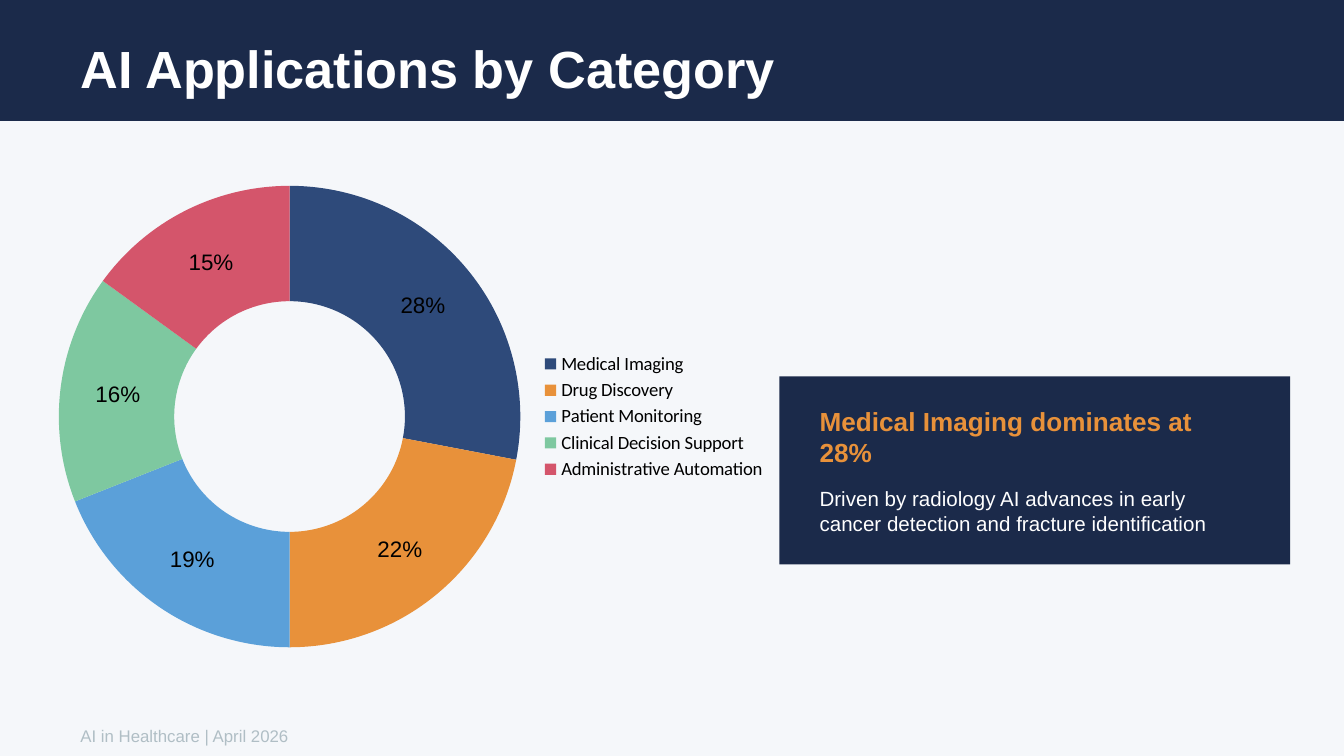
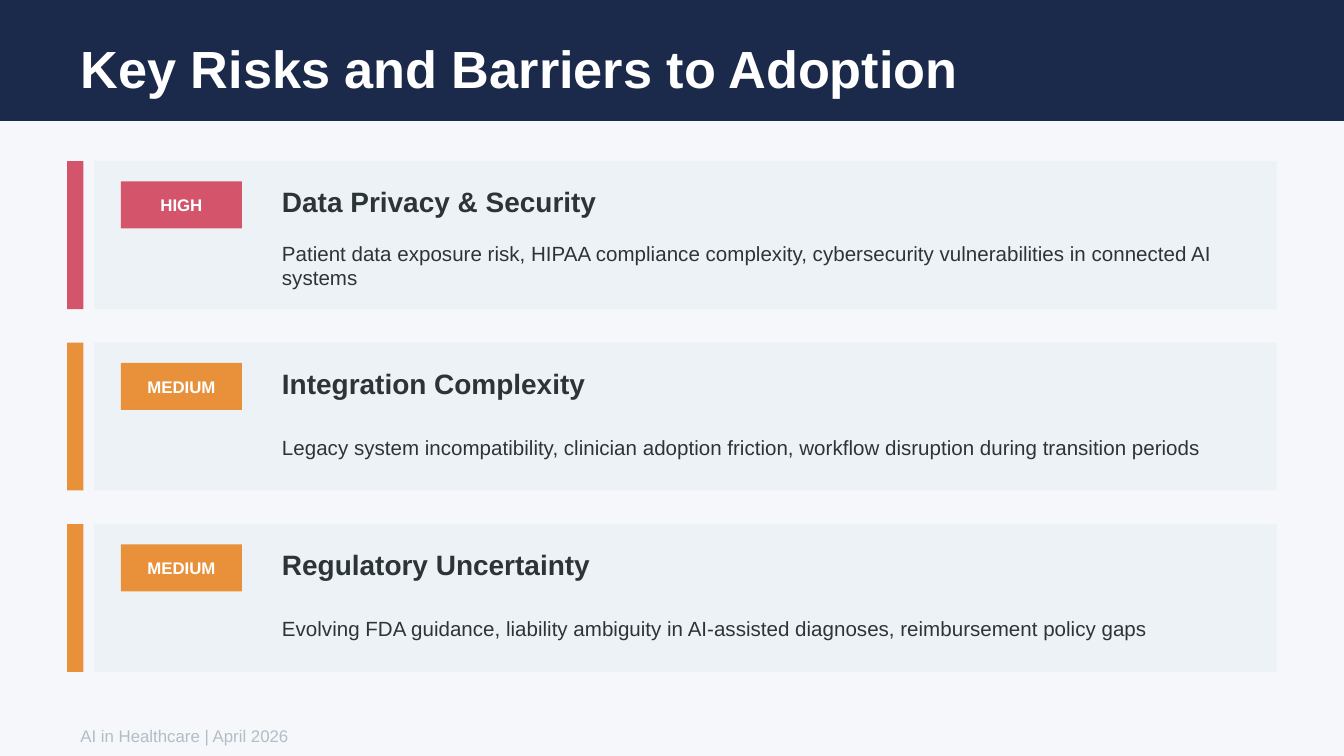
import pptx
import pptx.chart.data
import pptx.dml.color
import pptx.enum.chart
import pptx.enum.shapes
import pptx.enum.text
import pptx.util

PX = 4572  # EMU per px, 200 px to the inch
WIDTH, HEIGHT = 2000, 1125
FONT = "Arial"
NAVY, PAPER, CARD, WHITE = "1B2A4A", "F5F7FA", "EDF2F7", "FFFFFF"
INK, MUTED, BLACK, EDGE = "2D3436", "B0BEC5", "000000", "F9F9F9"
RED, ORANGE = "D4556B", "E8913A"
FOOTER = "AI in Healthcare | April 2026"

# Text styles
TITLE = {"size": 28, "bold": True, "color": WHITE}
CALLOUT_HEAD = {"size": 14, "bold": True, "color": ORANGE}
CALLOUT_BODY = {"size": 11, "bold": False, "color": WHITE}
CARD_HEAD = {"size": 15, "bold": True, "color": INK}
CARD_BODY = {"size": 11, "bold": False, "color": INK}
BADGE = {"size": 9, "bold": True, "color": WHITE}
FOOT = {"size": 9, "bold": False, "color": MUTED}

CATEGORIES = [
    ("Medical Imaging", 28, "2E4A7A"),
    ("Drug Discovery", 22, ORANGE),
    ("Patient Monitoring", 19, "5BA0D9"),
    ("Clinical Decision Support", 16, "7EC8A0"),
    ("Administrative Automation", 15, RED),
]

RISKS = [
    ("HIGH", RED, "Data Privacy & Security",
     "Patient data exposure risk, HIPAA compliance complexity, "
     "cybersecurity vulnerabilities in connected AI systems"),
    ("MEDIUM", ORANGE, "Integration Complexity",
     "Legacy system incompatibility, clinician adoption friction, "
     "workflow disruption during transition periods"),
    ("MEDIUM", ORANGE, "Regulatory Uncertainty",
     "Evolving FDA guidance, liability ambiguity in AI-assisted diagnoses, "
     "reimbursement policy gaps"),
]


def rgb(value):
    return pptx.dml.color.RGBColor.from_string(value)


def emu(*lengths):
    return [length * PX for length in lengths]


def paint(fill, color):
    fill.solid()
    fill.fore_color.rgb = rgb(color)


def set_font(font, size, color, bold=False, name=FONT):
    values = {"name": name, "size": pptx.util.Pt(size), "bold": bold}
    for key, value in values.items():
        setattr(font, key, value)
    font.color.rgb = rgb(color)


def write(sp, text, style, align="LEFT"):
    tf = sp.text_frame
    frame = {
        "word_wrap": True,
        "auto_size": pptx.enum.text.MSO_AUTO_SIZE.NONE,
        "vertical_anchor": pptx.enum.text.MSO_ANCHOR.MIDDLE,
    }
    for key, value in frame.items():
        setattr(tf, key, value)
    p = tf.paragraphs[0]
    p.alignment = getattr(pptx.enum.text.PP_ALIGN, align)
    r = p.add_run()
    r.text = text
    set_font(r.font, **style)


def add_rect(slide, box, color):
    sp = slide.shapes.add_shape(pptx.enum.shapes.MSO_SHAPE.RECTANGLE, *emu(*box))
    sp.shadow.inherit = False
    paint(sp.fill, color)
    sp.line.fill.background()
    return sp


def add_text(slide, box, text, style):
    write(slide.shapes.add_textbox(*emu(*box)), text, style)


def add_slide(prs, title):
    """Start a slide with the title band and footer."""
    slide = prs.slides.add_slide(prs.slide_layouts.get_by_name("Title Only"))
    sp = slide.shapes.title
    sp.left, sp.top, sp.width, sp.height = emu(100, 40, 1800, 120)
    write(sp, title, TITLE)
    band = add_rect(slide, (0, 0, WIDTH, 180), NAVY)
    sp.element.addprevious(band.element)  # band goes behind the title
    add_text(slide, (100, 1070, 1800, 50), FOOTER, FOOT)
    return slide


def add_doughnut(slide, box, rows):
    data = pptx.chart.data.CategoryChartData()
    data.categories = [name for name, _, _ in rows]
    data.add_series("Series 1", [value for _, value, _ in rows])
    chart = slide.shapes.add_chart(
        pptx.enum.chart.XL_CHART_TYPE.DOUGHNUT, *emu(*box), data).chart
    chart.has_title = False
    set_font(chart.font, 10, BLACK, name="Calibri")

    # Legend
    chart.has_legend = True
    chart.legend.position = pptx.enum.chart.XL_LEGEND_POSITION.RIGHT
    chart.legend.include_in_layout = False
    set_font(chart.legend.font, 10, BLACK, name="Calibri")

    # Slices and percentages
    plot = chart.plots[0]
    plot.vary_by_categories = True
    series = plot.series[0]
    series.format.line.color.rgb = rgb(EDGE)
    series.format.line.width = pptx.util.Pt(0.75)
    for i, (_, _, color) in enumerate(rows):
        paint(series.points[i].format.fill, color)
    labels = series.data_labels
    values = {
        "show_percentage": True, "show_value": False,
        "show_category_name": False, "show_legend_key": False,
        "number_format": "0%", "number_format_is_linked": False,
    }
    for key, value in values.items():
        setattr(labels, key, value)
    set_font(labels.font, 12, BLACK)


def add_risk(slide, top, level, color, heading, detail):
    """One risk: accent bar, card, level badge and its texts."""
    add_rect(slide, (100, top, 24, 220), color)
    add_rect(slide, (140, top, 1760, 220), CARD)
    badge = add_rect(slide, (180, top + 30, 180, 70), color)
    write(badge, level, BADGE, "CENTER")
    add_text(slide, (400, top + 20, 1400, 80), heading, CARD_HEAD)
    add_text(slide, (400, top + 100, 1460, 110), detail, CARD_BODY)


def build_categories(prs):
    slide = add_slide(prs, "AI Applications by Category")
    add_doughnut(slide, (60, 220, 1100, 800), CATEGORIES)
    # Callout
    add_rect(slide, (1160, 560, 760, 280), NAVY)
    add_text(slide, (1200, 600, 680, 100),
             "Medical Imaging dominates at 28%", CALLOUT_HEAD)
    add_text(slide, (1200, 700, 680, 120),
             "Driven by radiology AI advances in early cancer detection "
             "and fracture identification", CALLOUT_BODY)


def build_risks(prs):
    slide = add_slide(prs, "Key Risks and Barriers to Adoption")
    for i, risk in enumerate(RISKS):
        add_risk(slide, 240 + 270 * i, *risk)


def main():
    prs = pptx.Presentation()
    prs.slide_width, prs.slide_height = emu(WIDTH, HEIGHT)
    paint(prs.slide_master.background.fill, PAPER)
    build_categories(prs)
    build_risks(prs)
    prs.save("out.pptx")


if __name__ == "__main__":
    main()
